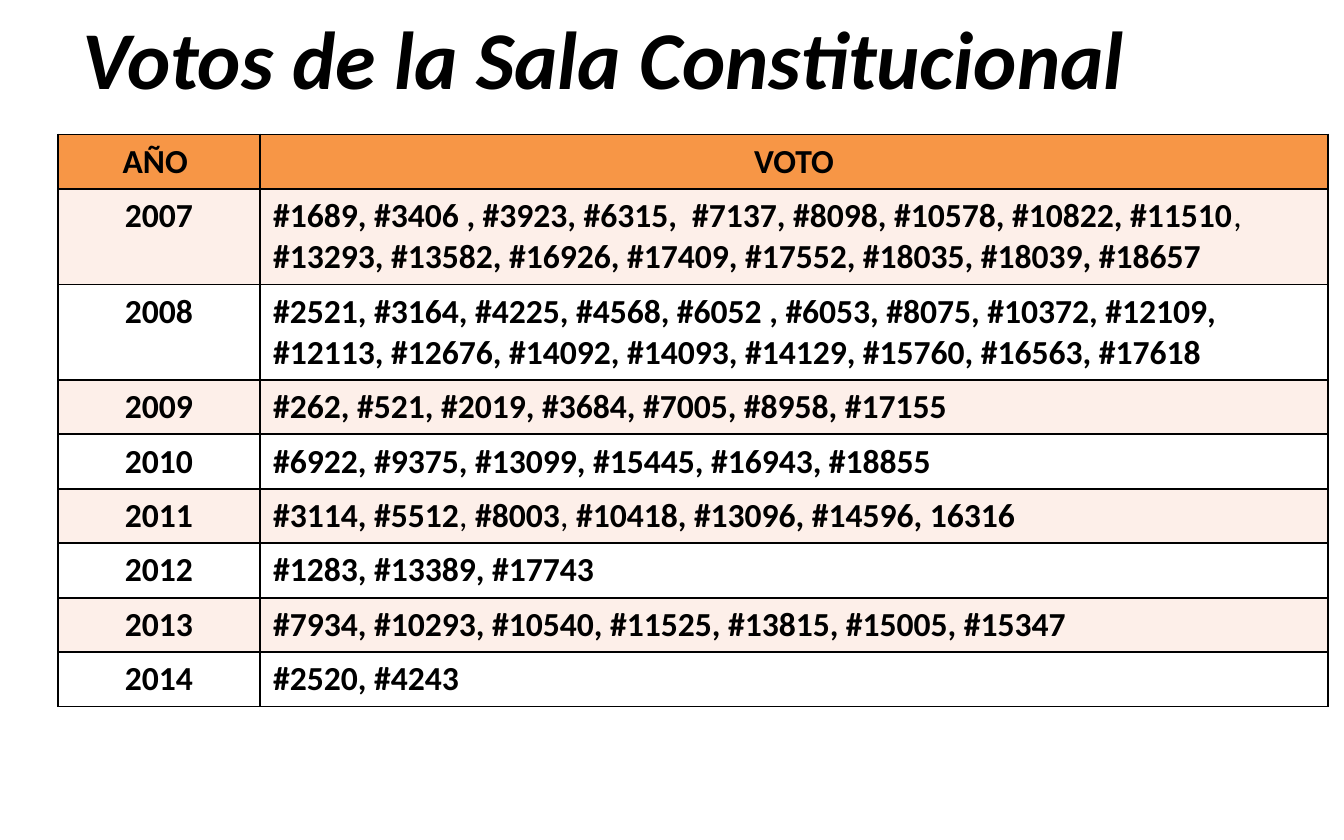
"""Build a slide with a table of the Sala Constitucional votes by year."""
from pptx import Presentation
from pptx.dml.color import RGBColor
from pptx.enum.text import MSO_ANCHOR, MSO_AUTO_SIZE, PP_ALIGN
from pptx.oxml import parse_xml
from pptx.oxml.ns import nsdecls
from pptx.util import Cm, Pt

COLORS = {"ink": "000000", "head": "F79646", "band": "FDEFE9", "plain": "FFFFFF"}
ROWS = [
    ("AÑO ", ["VOTO"]),
    ("2007", ["#1689, #3406 , #3923, #6315,  #7137, #8098, #10578, #10822, #11510", ", ",
              "#13293, #13582, #16926, #17409, #17552, #18035, #18039, #18657"]),
    ("2008", ["#2521, #3164, #4225, #4568, #6052 , #6053, #8075, #10372, #12109, "
              "#12113, #12676, #14092, #14093, #14129, #15760, #16563, #17618"]),
    ("2009", ["#262, #521, #2019, #3684, #7005, #8958, #17155"]),
    ("2010", ["#6922, #9375, #13099, #15445, #16943, #18855"]),
    ("2011", ["#3114, #5512", ", ", "#8003", ", ", "#10418, #13096, #14596, 16316"]),
    ("2012", ["#1283, #13389, #17743"]),
    ("2013", ["#7934, #10293, #10540, #11525, #13815, #15005, #15347"]),
    ("2014", ["#2520, #4243"]),
]


def write(frame, text, size=18, bold=True, italic=False, align=PP_ALIGN.LEFT):
    para = frame.paragraphs[0]
    para.alignment = align
    run = para.add_run()
    run.text = text
    font = run.font
    font.name, font.size, font.bold, font.italic = "Calibri", Pt(size), bold, italic
    font.color.rgb = RGBColor.from_string(COLORS["ink"])


def paint(cell, color):
    props = cell._tc.get_or_add_tcPr()
    for side in ("lnL", "lnR", "lnT", "lnB"):
        props.append(parse_xml(
            f'<a:{side} {nsdecls("a")} w="{Pt(1)}"><a:solidFill>'
            f'<a:srgbClr val="{COLORS["ink"]}"/></a:solidFill></a:{side}>'))
    cell.fill.solid()
    cell.fill.fore_color.rgb = RGBColor.from_string(COLORS[color])


deck = Presentation()
deck.slide_width, deck.slide_height = Cm(25.4), Cm(15.88)
slide = deck.slides.add_slide(deck.slide_layouts[5])

title = slide.shapes.title
title.left, title.top, title.width, title.height = Cm(1.3), Cm(0), Cm(22.86), Cm(2.13)
title.text_frame.auto_size = MSO_AUTO_SIZE.NONE
title.text_frame.vertical_anchor = MSO_ANCHOR.MIDDLE
write(title.text_frame, "Votos de la Sala Constitucional", size=44, italic=True)

table = slide.shapes.add_table(len(ROWS), 2, Cm(1.1), Cm(2.54), Cm(24), Cm(10.8)).table
table.columns[0].width, table.columns[1].width = Cm(3.81), Cm(20.19)
for row, (year, votes) in enumerate(ROWS):
    table.rows[row].height = Cm(1.8 if year in ("2007", "2008") else 1.03)
    color = "head" if row == 0 else "band" if row % 2 else "plain"
    left, right = table.cell(row, 0), table.cell(row, 1)
    paint(left, color)
    paint(right, color)
    write(left.text_frame, year, align=PP_ALIGN.CENTER)
    for part, text in enumerate(votes):
        write(right.text_frame, text, bold=part % 2 == 0,
              align=PP_ALIGN.LEFT if row else PP_ALIGN.CENTER)

deck.save("out.pptx")
